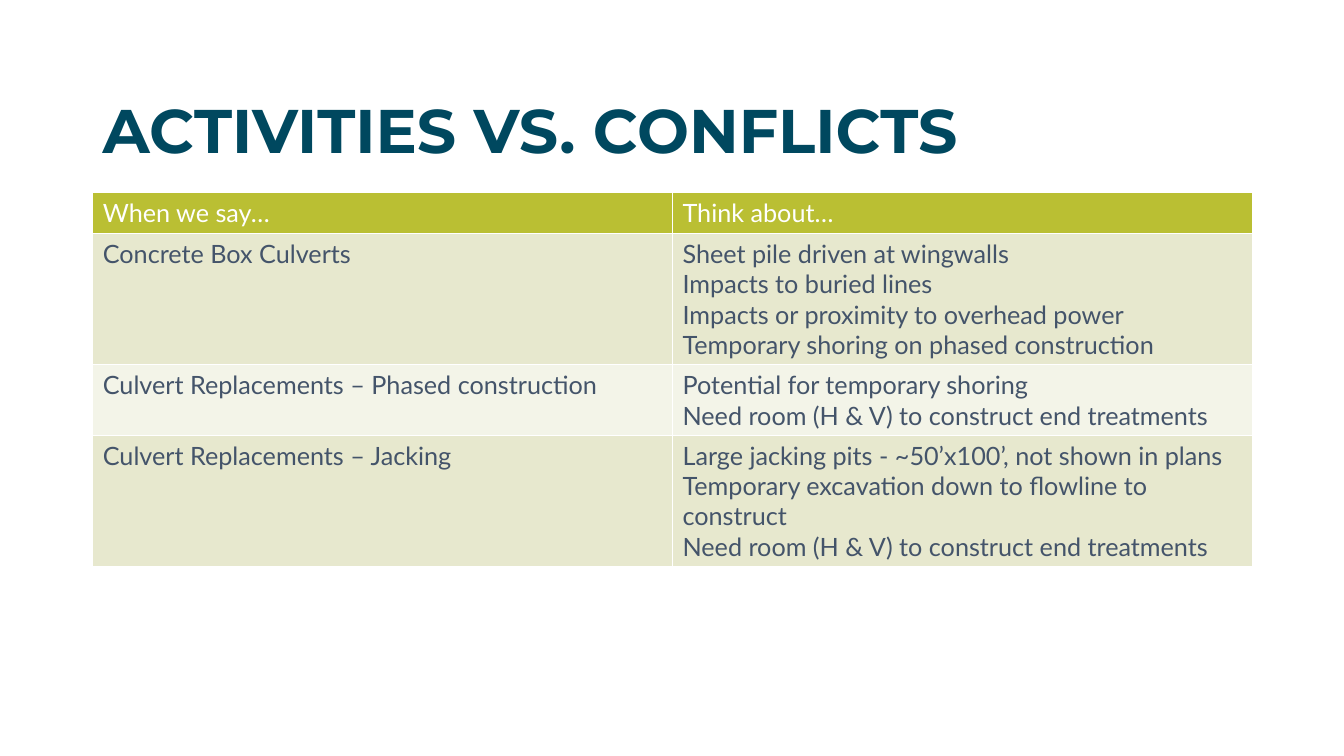
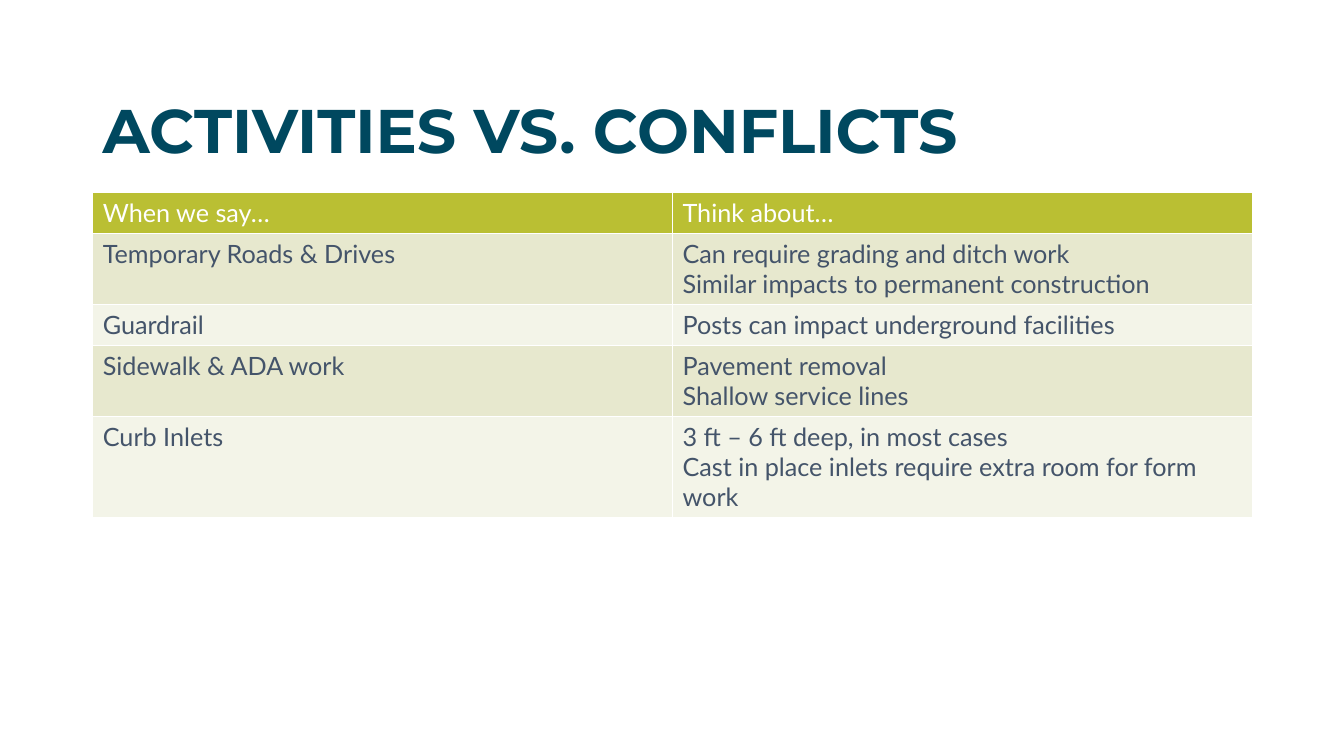
from pptx import Presentation
from pptx.dml.color import RGBColor
from pptx.enum import text
from pptx.util import Inches, Pt

TEAL, LIME, SLATE, WHITE = "00485F", "BABF33", "44546A", "FFFFFF"
BANDS = "E7E8CE", "F3F4E8"
LEFT, WIDTH = 0.92, 11.5
ROW = 0.41
TITLE = "ACTIVITIES VS. CONFLICTS"
HEADS = "When we say…", "Think about…"

CULVERTS = [
    ("Concrete Box Culverts",
     "Sheet pile driven at wingwalls\n"
     "Impacts to buried lines\n"
     "Impacts or proximity to overhead power\n"
     "Temporary shoring on phased construction"),
    ("Culvert Replacements – Phased construction",
     "Potential for temporary shoring\n"
     "Need room (H & V) to construct end treatments"),
    ("Culvert Replacements – Jacking",
     "Large jacking pits - ~50’x100’, not shown in plans\n"
     "Temporary excavation down to flowline to construct\n"
     "Need room (H & V) to construct end treatments"),
]
ROADS = [
    ("Temporary Roads & Drives",
     "Can require grading and ditch work\n"
     "Similar impacts to permanent construction"),
    ("Guardrail", "Posts can impact underground facilities"),
    ("Sidewalk & ADA work", "Pavement removal\nShallow service lines"),
    ("Curb Inlets",
     "3 ft – 6 ft deep, in most cases\n"
     "Cast in place inlets require extra room for form work"),
]


def color(code):
    return RGBColor.from_string(code)


def style(frame, face, size, code, bold=False):
    """Set one font on every paragraph of a text frame."""
    for para in frame.paragraphs:
        font = para.font
        font.name, font.size, font.bold = face, Pt(size), bold
        font.color.rgb = color(code)


def add_title(slide, left, top, width, height):
    box = slide.shapes.add_textbox(*map(Inches, (left, top, width, height)))
    frame = box.text_frame
    frame.word_wrap = True
    frame.vertical_anchor = text.MSO_ANCHOR.MIDDLE
    frame.text = TITLE
    frame.paragraphs[0].line_spacing = 0.9
    style(frame, "Montserrat", 44, TEAL, True)


def add_grid(slide, items, left, top, width):
    """Draw the header row and banded rows; rows grow with their text."""
    rows = [HEADS, *items]
    size = map(Inches, (left, top, width, ROW * len(rows)))
    table = slide.shapes.add_table(len(rows), len(HEADS), *size).table
    for r, row in enumerate(rows):
        fill, ink = (BANDS[(r - 1) % 2], SLATE) if r else (LIME, WHITE)
        for c, words in enumerate(row):
            cell = table.cell(r, c)
            cell.text = words
            cell.fill.solid()
            cell.fill.fore_color.rgb = color(fill)
            style(cell.text_frame, "Lato", 18, ink)


def main():
    deck = Presentation()
    deck.slide_width, deck.slide_height = Inches(13.33), Inches(7.5)
    for items in (CULVERTS, ROADS):
        slide = deck.slides.add_slide(deck.slide_layouts[6])
        add_title(slide, LEFT, 0.6, WIDTH, 1.45)
        add_grid(slide, items, LEFT, 1.91, WIDTH)
    deck.save("out.pptx")


if __name__ == "__main__":
    main()
